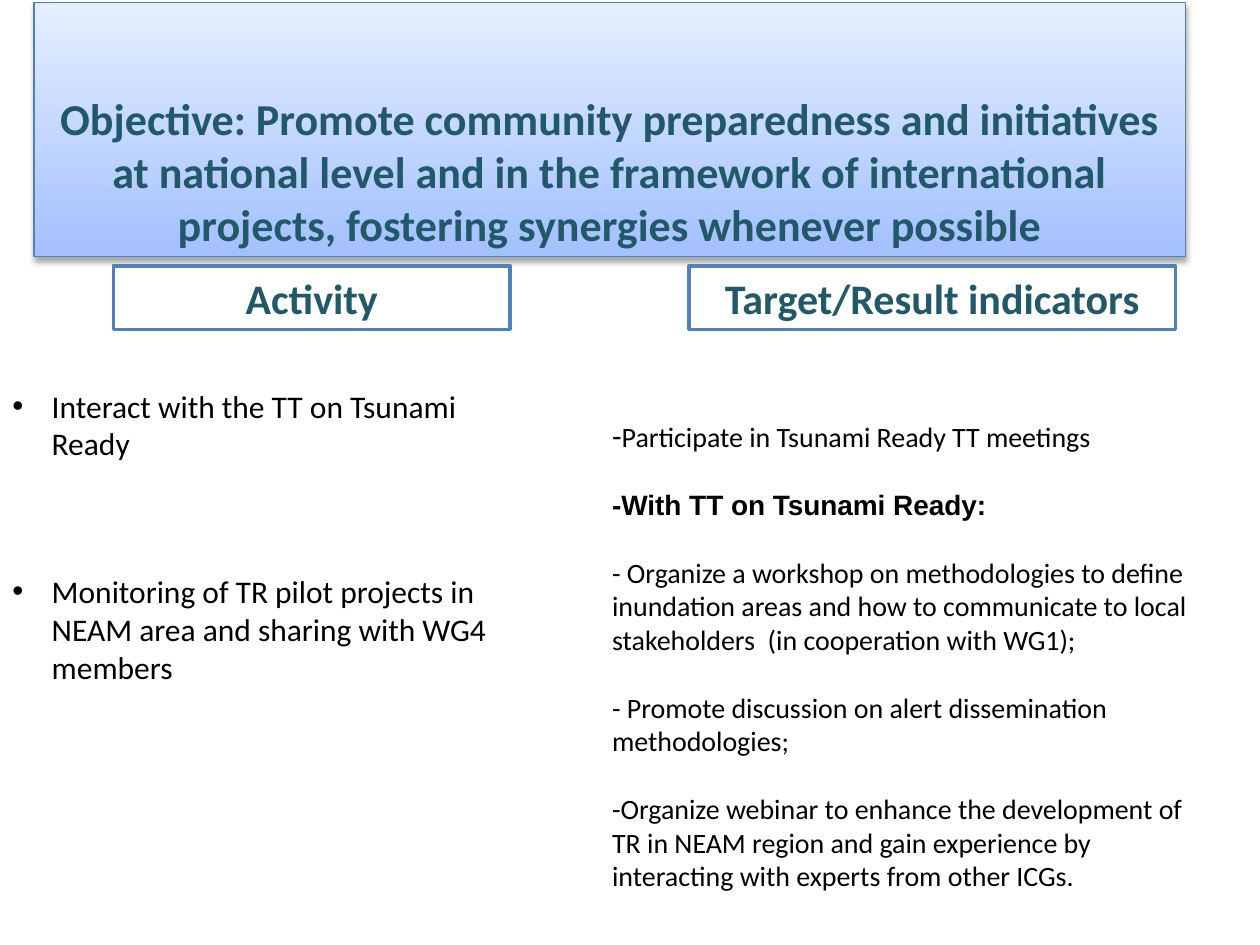
"""Build the objective slide with its activities and result indicators."""
from dataclasses import dataclass

from lxml.etree import SubElement
from pptx import Presentation
from pptx.dml.color import RGBColor
from pptx.enum.shapes import MSO_SHAPE
from pptx.enum.text import MSO_ANCHOR, MSO_AUTO_SIZE, PP_ALIGN
from pptx.oxml.ns import qn
from pptx.util import Pt


@dataclass(frozen=True)
class Theme:
    """Colours, fonts and type sizes of the slide."""
    heading: RGBColor = RGBColor(0x21, 0x59, 0x68)
    body: RGBColor = RGBColor(0, 0, 0)
    outline: RGBColor = RGBColor(0x4F, 0x81, 0xBD)
    panel: RGBColor = RGBColor(0xFF, 0xFF, 0xFF)
    gradient_bottom: RGBColor = RGBColor(0xA3, 0xC0, 0xFF)
    gradient_top: RGBColor = RGBColor(0xE5, 0xEF, 0xFF)
    font: str = "Calibri"
    emphasis_font: str = "Arial"
    title_size: float = 25.2
    header_size: float = 24
    activity_size: float = 18
    indicator_size: float = 16


THEME = Theme()


@dataclass(frozen=True)
class Box:
    """Position and size in points."""
    left: float
    top: float
    width: float
    height: float

    def lengths(self) -> tuple:
        """Return the four lengths for python-pptx."""
        return Pt(self.left), Pt(self.top), Pt(self.width), Pt(self.height)


@dataclass(frozen=True)
class TextRun:
    """A piece of text in one format."""
    text: str
    size: float
    color: RGBColor = THEME.body
    bold: bool = False
    font: str = THEME.font


@dataclass(frozen=True)
class Block:
    """A short text with its place on the slide."""
    text: str
    box: Box


TITLE = Block(
    "Objective: Promote community preparedness and initiatives at national level and in "
    "the framework of international projects, fostering synergies whenever possible",
    Box(19.4, 1.4, 658, 145.4),
)
HEADERS = (
    Block("Activity", Box(64.8, 151.9, 226.8, 36.3)),
    Block("Target/Result indicators", Box(393.8, 151.9, 277.9, 36.3)),
)
ACTIVITIES = (
    Block("Interact with the TT on Tsunami Ready", Box(0, 217.4, 292.3, 94.3)),
    Block("Monitoring of TR pilot projects in NEAM area and sharing with WG4 members",
          Box(0, 323.3, 292.3, 72.7)),
)
INDICATOR_BOX = Box(342.7, 233.3, 357.1, 280.8)
INDICATORS = (
    (TextRun("-", THEME.activity_size),
     TextRun("Participate in Tsunami Ready TT meetings", THEME.indicator_size)),
    (TextRun("-With TT on Tsunami Ready:", THEME.indicator_size,
             bold=True, font=THEME.emphasis_font),),
    (TextRun("- Organize a workshop on methodologies to define inundation areas and how to "
             "communicate to local stakeholders  (in cooperation with WG1);",
             THEME.indicator_size),),
    (TextRun("- Promote discussion on alert dissemination methodologies;",
             THEME.indicator_size),),
    (TextRun("-Organize webinar to enhance the development of TR in NEAM region and gain "
             "experience by interacting with experts from other ICGs.",
             THEME.indicator_size),),
)
INDICATOR_GAP = 19.5
BULLET_INDENT = 22.5


def add_run(paragraph, text_run: TextRun) -> None:
    """Append a formatted run to a paragraph."""
    run = paragraph.add_run()
    run.text = text_run.text
    run.font.name = text_run.font
    run.font.size = Pt(text_run.size)
    run.font.bold = text_run.bold
    run.font.color.rgb = text_run.color


def set_frame(shape, anchor: MSO_ANCHOR):
    """Make the text of a shape wrap at a fixed size and return its frame."""
    frame = shape.text_frame
    frame.word_wrap = True
    frame.auto_size = MSO_AUTO_SIZE.NONE
    frame.vertical_anchor = anchor
    return frame


def add_soft_shadow(shape) -> None:
    """Give a shape a soft shadow below it."""
    effects = SubElement(shape.element.spPr, qn("a:effectLst"))
    shadow = SubElement(effects, qn("a:outerShdw"), blurRad=str(Pt(3)), dist=str(Pt(2)),
                        dir="5400000", rotWithShape="0")
    color = SubElement(shadow, qn("a:srgbClr"), val="000000")
    SubElement(color, qn("a:alpha"), val="35000")


def format_title(slide, block: Block) -> None:
    """Place and style the title placeholder."""
    title = slide.shapes.title
    title.left, title.top, title.width, title.height = block.box.lengths()
    title.fill.gradient()
    title.fill.gradient_angle = 90
    colors = (THEME.gradient_bottom, THEME.gradient_top)
    for stop, color in zip(title.fill.gradient_stops, colors):
        stop.color.rgb = color
    title.line.color.rgb = THEME.outline
    title.line.width = Pt(0.75)
    add_soft_shadow(title)
    paragraph = set_frame(title, MSO_ANCHOR.BOTTOM).paragraphs[0]
    paragraph.alignment = PP_ALIGN.CENTER
    add_run(paragraph, TextRun(block.text, THEME.title_size, THEME.heading, True))


def add_header(slide, block: Block) -> None:
    """Draw an outlined column header."""
    shape = slide.shapes.add_shape(MSO_SHAPE.RECTANGLE, *block.box.lengths())
    shape.shadow.inherit = False
    shape.fill.solid()
    shape.fill.fore_color.rgb = THEME.panel
    shape.line.color.rgb = THEME.outline
    shape.line.width = Pt(2)
    paragraph = set_frame(shape, MSO_ANCHOR.MIDDLE).paragraphs[0]
    paragraph.alignment = PP_ALIGN.CENTER
    add_run(paragraph, TextRun(block.text, THEME.header_size, THEME.heading, True))


def add_activity(slide, block: Block) -> None:
    """Add one bulleted activity."""
    shape = slide.shapes.add_textbox(*block.box.lengths())
    paragraph = set_frame(shape, MSO_ANCHOR.TOP).paragraphs[0]
    add_run(paragraph, TextRun(block.text, THEME.activity_size))
    properties = paragraph._p.get_or_add_pPr()
    properties.set("marL", str(Pt(BULLET_INDENT)))
    properties.set("indent", str(-Pt(BULLET_INDENT)))
    SubElement(properties, qn("a:buFont"), typeface=THEME.emphasis_font)
    SubElement(properties, qn("a:buChar"), char="•")


def add_indicators(slide) -> None:
    """Add the list of result indicators with even gaps."""
    shape = slide.shapes.add_textbox(*INDICATOR_BOX.lengths())
    frame = set_frame(shape, MSO_ANCHOR.MIDDLE)
    for index, text_runs in enumerate(INDICATORS):
        paragraph = frame.add_paragraph() if index else frame.paragraphs[0]
        paragraph.space_before = Pt(INDICATOR_GAP if index else 0)
        for text_run in text_runs:
            add_run(paragraph, text_run)


def main() -> None:
    """Build and save the presentation."""
    presentation = Presentation()
    presentation.slide_width, presentation.slide_height = Pt(720), Pt(540)
    slide = presentation.slides.add_slide(presentation.slide_layouts[5])
    format_title(slide, TITLE)
    for header in HEADERS:
        add_header(slide, header)
    for activity in ACTIVITIES:
        add_activity(slide, activity)
    add_indicators(slide)
    presentation.save("out.pptx")


if __name__ == "__main__":
    main()
